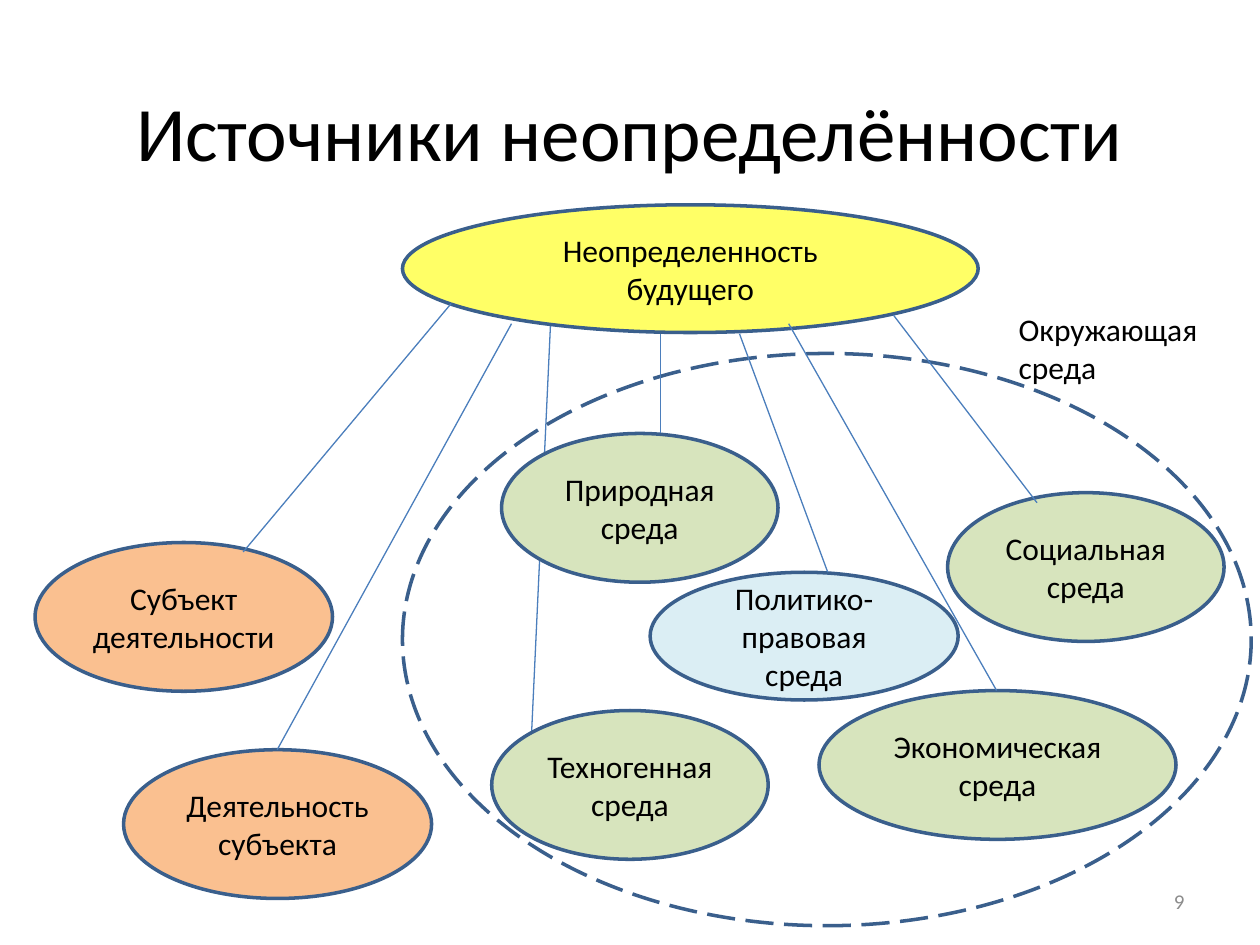
from dataclasses import dataclass
from typing import Optional

from lxml import etree
from pptx import Presentation
from pptx import util as u
from pptx.dml.color import RGBColor
from pptx.enum import dml, shapes, text
from pptx.oxml import ns

Pt = u.Pt
FONT = "Calibri"
BLACK = RGBColor(0x00, 0x00, 0x00)
GREY = RGBColor(0x8C, 0x8C, 0x8C)
OUTLINE = RGBColor(0x3A, 0x5F, 0x8C)
LINK = RGBColor(0x4B, 0x7E, 0xBC)
YELLOW = RGBColor(0xFF, 0xFF, 0x66)
ORANGE = RGBColor(0xFA, 0xC0, 0x90)
GREEN = RGBColor(0xD7, 0xE4, 0xBD)
PALE_BLUE = RGBColor(0xDB, 0xEE, 0xF4)


@dataclass(frozen=True)
class Oval:
    left: float
    top: float
    width: float
    height: float
    words: str = ""
    fill: Optional[RGBColor] = None


@dataclass(frozen=True)
class Link:
    x1: float
    y1: float
    x2: float
    y2: float


@dataclass(frozen=True)
class Label:
    left: float
    top: float
    width: float
    height: float
    words: str
    size: float
    align: text.PP_ALIGN
    anchor: text.MSO_ANCHOR
    color: RGBColor = BLACK


TECHNOGENIC_LINK = Link(314.6, 185, 303.8, 418.3)
POLITICAL_LINK = Link(422.6, 190.8, 473, 327)
OTHER_LINKS = [
    Link(257.8, 173.5, 139, 315.4),
    Link(292.3, 185, 158.4, 428.4),
    Link(377.3, 190.8, 377.3, 247.7),
    Link(450.7, 185, 569.5, 394.6),
    Link(510.5, 180, 592.6, 287.3),
]

SOURCES = [
    Oval(20, 310, 170, 85, "Субъект деятельности", ORANGE),
    Oval(70.6, 428.4, 176, 85, "Деятельность субъекта", ORANGE),
    Oval(281, 406, 158, 85, "Техногенная среда", GREEN),
    Oval(286.6, 247.7, 158, 85, "Природная среда", GREEN),
    Oval(468, 394.6, 204, 85, "Экономическая среда", GREEN),
    Oval(541.5, 281.5, 158, 85, "Социальная среда", GREEN),
]
FUTURE = Oval(230, 117, 329, 73, "Неопределенность будущего", YELLOW)
SURROUNDINGS = Oval(230, 202, 485, 327)
POLITICAL = Oval(371.5, 327, 176, 73, "Политико-правовая среда", PALE_BLUE)

LABELS = [
    Label(36, 29.5, 648, 90, "Источники неопределённости", 44,
          text.PP_ALIGN.CENTER, text.MSO_ANCHOR.MIDDLE),
    Label(575, 173.5, 130, 51, "Окружающая среда", 18,
          text.PP_ALIGN.LEFT, text.MSO_ANCHOR.TOP),
    Label(516, 500.4, 168, 28.8, "9", 12,
          text.PP_ALIGN.RIGHT, text.MSO_ANCHOR.MIDDLE, GREY),
]


def write(box, words: str, size: float, align, anchor, color: RGBColor) -> None:
    frame = box.text_frame
    frame.word_wrap = True
    frame.vertical_anchor = anchor
    para = frame.paragraphs[0]
    para.text = words
    para.alignment = align
    para.font.name = FONT
    para.font.size = Pt(size)
    para.font.color.rgb = color


def draw_oval(page, oval: Oval) -> None:
    """Draw a filled oval with words, or a dashed ring if it has no fill."""
    shape = page.shapes.add_shape(
        shapes.MSO_SHAPE.OVAL,
        Pt(oval.left), Pt(oval.top), Pt(oval.width), Pt(oval.height))
    shape.shadow.inherit = False
    shape.line.color.rgb = OUTLINE
    shape.line.width = Pt(2)
    if oval.fill is None:
        shape.fill.background()
        shape.line.dash_style = dml.MSO_LINE.LONG_DASH
        return
    shape.fill.solid()
    shape.fill.fore_color.rgb = oval.fill
    write(shape, oval.words, 18, text.PP_ALIGN.CENTER,
          text.MSO_ANCHOR.MIDDLE, BLACK)


def draw_link(page, link: Link) -> None:
    line = page.shapes.add_connector(
        shapes.MSO_CONNECTOR.STRAIGHT,
        Pt(link.x1), Pt(link.y1), Pt(link.x2), Pt(link.y2))
    line.line.color.rgb = LINK
    line.line.width = Pt(0.75)
    etree.SubElement(line._element.spPr, ns.qn("a:effectLst"))


def draw_label(page, label: Label) -> None:
    box = page.shapes.add_textbox(
        Pt(label.left), Pt(label.top), Pt(label.width), Pt(label.height))
    write(box, label.words, label.size, label.align, label.anchor, label.color)


def main() -> None:
    deck = Presentation()
    deck.slide_width, deck.slide_height = Pt(720), Pt(540)
    page = deck.slides.add_slide(deck.slide_layouts[6])

    # Back to front: the ovals hide parts of the links beneath them.
    draw_link(page, TECHNOGENIC_LINK)
    for oval in [*SOURCES, FUTURE, SURROUNDINGS]:
        draw_oval(page, oval)
    for link in OTHER_LINKS:
        draw_link(page, link)
    draw_oval(page, POLITICAL)
    draw_link(page, POLITICAL_LINK)
    for label in LABELS:
        draw_label(page, label)

    deck.save("out.pptx")


if __name__ == "__main__":
    main()
